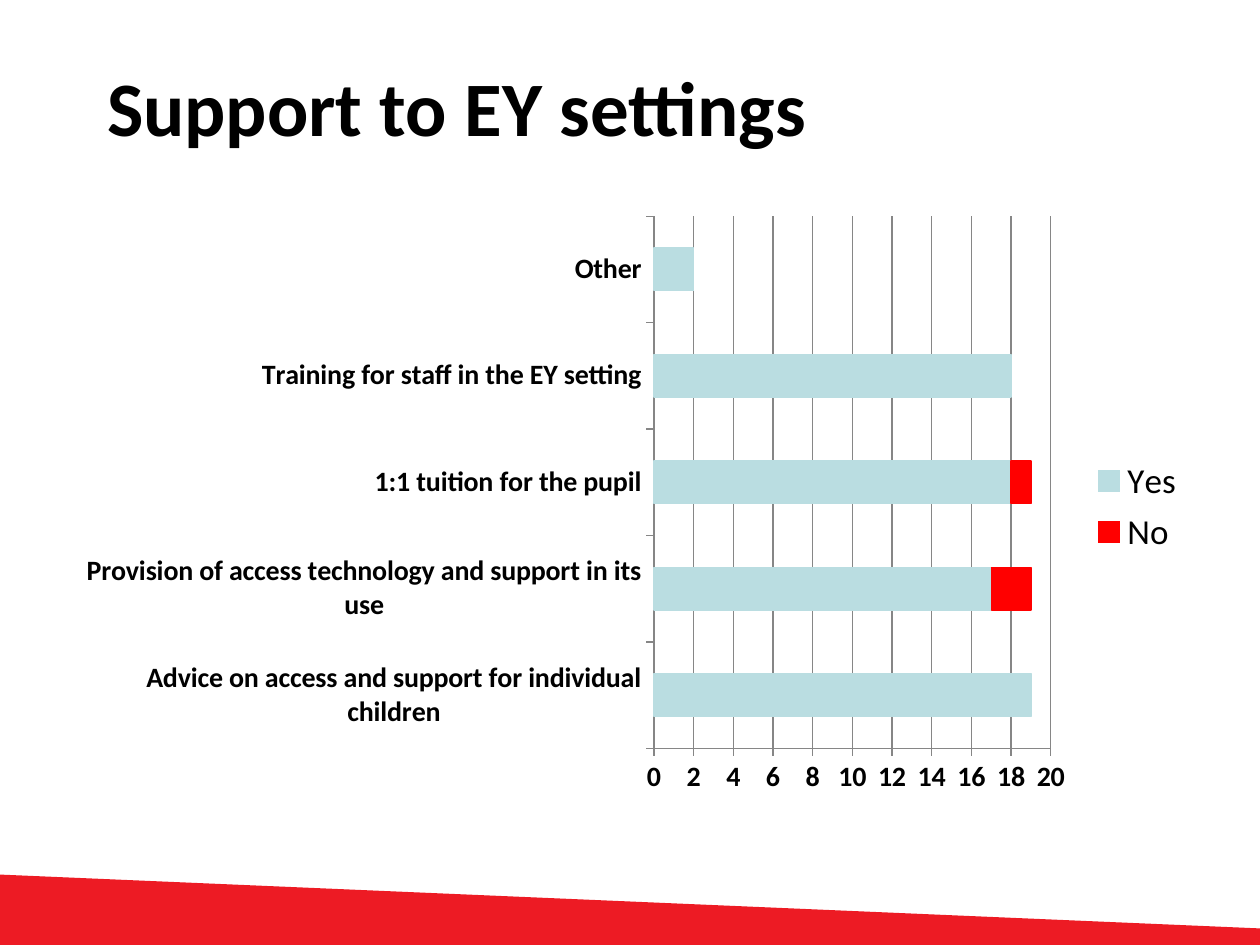
from lxml import etree
from pptx import Presentation
from pptx import util as u
from pptx.chart.data import CategoryChartData
from pptx.dml.color import RGBColor
from pptx.enum import chart as c
from pptx.enum import text
from pptx.oxml.ns import qn

BLACK = RGBColor(0x00, 0x00, 0x00)
GREY = RGBColor(0x86, 0x86, 0x86)
BAND_RED = RGBColor(0xED, 0x1B, 0x24)
PALE_TEAL = RGBColor(0xBA, 0xDD, 0xE1)
RED = RGBColor(0xFF, 0x00, 0x00)
FONT = "Calibri"

TITLE = "Support to EY settings"
SUPPORT_TYPES = [
    "Advice on access and support for individual children",
    "Provision of access technology and support in its use",
    "1:1 tuition for the pupil",
    "Training for staff in the EY setting",
    "Other",
]
ANSWERS = [
    ("Yes", [19, 17, 18, 18, 2], PALE_TEAL),
    ("No", [None, 2, 1, None, None], RED),
]
BAND_POINTS = [(-0.02, 6.94), (-0.02, 7.51), (10.04, 7.53), (10.04, 7.37)]
TITLE_BOX = (0.75, 0.21, 6.77, 1.26)
CHART_BOX = (0.51, 1.62, 9, 4.8)
PLOT_SHARES = {"x": 0.52, "y": 0.02, "w": 0.35, "h": 0.88}


def inches(lengths):
    return [u.Inches(length) for length in lengths]


def set_font(font, size, bold):
    values = {"name": FONT, "size": u.Pt(size), "bold": bold}
    for name, value in values.items():
        setattr(font, name, value)
    font.color.rgb = BLACK


def add_band(slide):
    start, *others = [inches(point) for point in BAND_POINTS]
    builder = slide.shapes.build_freeform(*start, scale=1.0)
    builder.add_line_segments(others, close=True)
    band = builder.convert_to_shape()
    band.shadow.inherit = False
    band.fill.solid()
    band.fill.fore_color.rgb = BAND_RED
    band.line.fill.background()


def format_title(title):
    title.left, title.top, title.width, title.height = inches(TITLE_BOX)
    frame = title.text_frame
    frame.text = TITLE
    frame.vertical_anchor = text.MSO_ANCHOR.MIDDLE
    paragraph = frame.paragraphs[0]
    paragraph.alignment = text.PP_ALIGN.LEFT
    set_font(paragraph.font, 44, True)


def place_plot(chart):
    """Fix the inner plot area as shares of the chart's size."""
    plot_area = chart.element.find(".//" + qn("c:plotArea"))
    layout = plot_area.find(qn("c:layout"))
    if layout is None:
        layout = etree.Element(qn("c:layout"))
        plot_area.insert(0, layout)
    manual = etree.SubElement(layout, qn("c:manualLayout"))
    settings = {"layoutTarget": "inner", "xMode": "edge", "yMode": "edge", **PLOT_SHARES}
    for name, value in settings.items():
        etree.SubElement(manual, qn("c:" + name)).set("val", str(value))


def add_support_chart(slide):
    data = CategoryChartData()
    data.categories = SUPPORT_TYPES
    for name, values, _ in ANSWERS:
        data.add_series(name, values)
    chart = slide.shapes.add_chart(
        c.XL_CHART_TYPE.BAR_STACKED, *inches(CHART_BOX), data).chart
    set_font(chart.font, 16, True)
    chart.has_title = False
    place_plot(chart)

    plot = chart.plots[0]
    plot.gap_width, plot.overlap, plot.vary_by_categories = 150, 100, False
    for series, (_, _, color) in zip(plot.series, ANSWERS):
        series.format.fill.solid()
        series.format.fill.fore_color.rgb = color
        series.format.line.color.rgb = color
        series.format.line.width = u.Pt(0.75)

    value_axis = chart.value_axis
    value_axis.minimum_scale, value_axis.maximum_scale, value_axis.major_unit = 0, 20, 2
    value_axis.has_major_gridlines = True
    for axis in (chart.category_axis, value_axis):
        axis.major_tick_mark = c.XL_TICK_MARK.OUTSIDE
        set_font(axis.tick_labels.font, 16, True)
    for part in (chart.category_axis, value_axis, value_axis.major_gridlines):
        part.format.line.color.rgb = GREY
        part.format.line.width = u.Pt(0.75)

    chart.has_legend = True
    chart.legend.position = c.XL_LEGEND_POSITION.RIGHT
    chart.legend.include_in_layout = False
    set_font(chart.legend.font, 20, False)


def main():
    presentation = Presentation()
    presentation.slide_width, presentation.slide_height = inches((10, 7.5))
    slide = presentation.slides.add_slide(presentation.slide_layouts[5])
    add_band(slide)
    format_title(slide.shapes.title)
    add_support_chart(slide)
    presentation.save("out.pptx")


if __name__ == "__main__":
    main()
